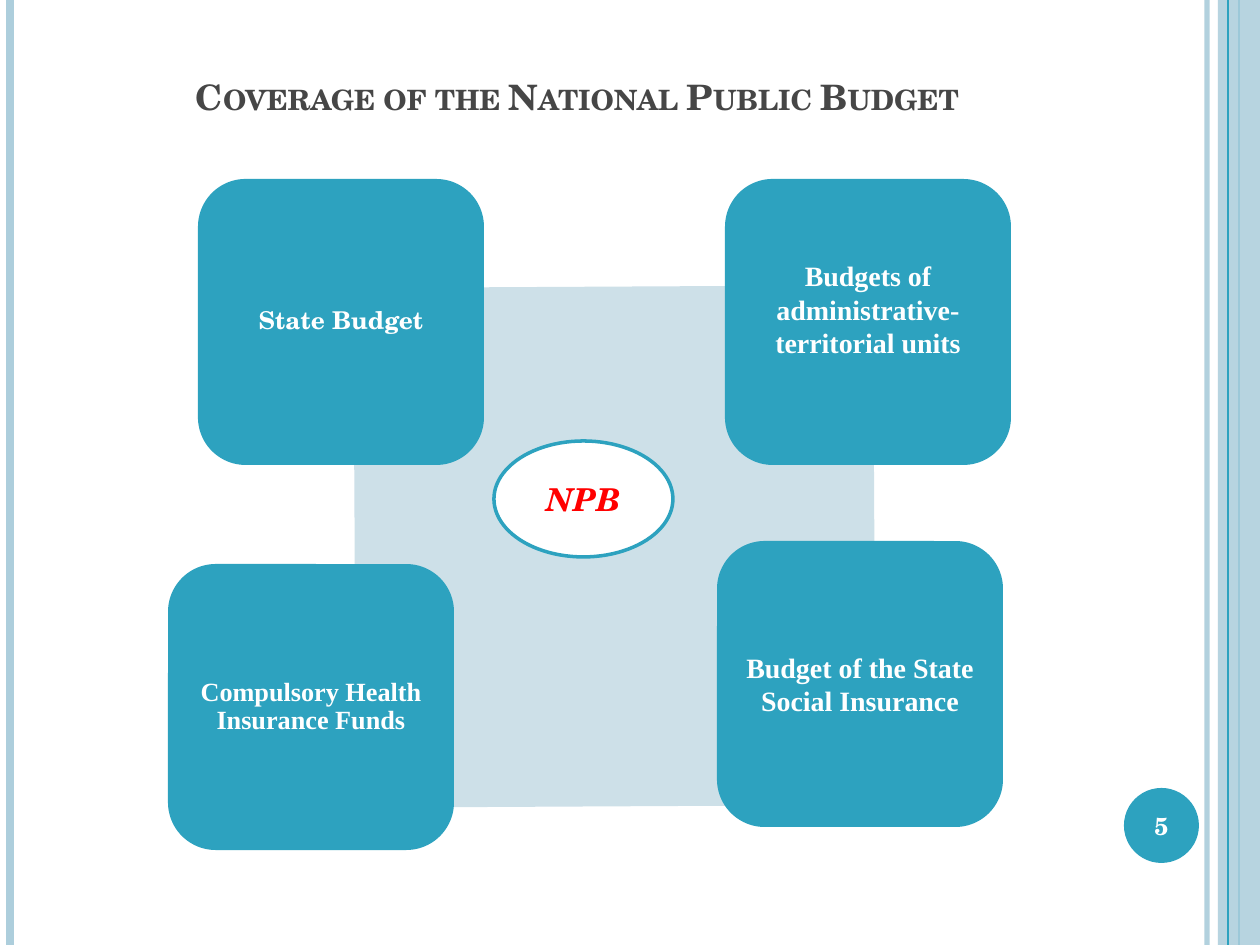
from lxml import etree
from pptx import Presentation
from pptx.dml.color import RGBColor
from pptx.enum.shapes import MSO_CONNECTOR, MSO_SHAPE
from pptx.enum.text import MSO_ANCHOR, PP_ALIGN
from pptx.oxml.ns import qn
from pptx.util import Emu, Pt

TEAL, PALE, WHITE = "2DA2BF", "ADCEDC", "FFFFFF"
SERIF, TIMES = "TeX Gyre Schola", "Times New Roman"
HIGH = 945


def px(n):
    return Emu(round(n * 914400 / 126))


def paint(color, code, alpha=100):
    """Set a color format's RGB and, below 100, its opacity in percent."""
    color.rgb = RGBColor.from_string(code)
    if alpha < 100:
        node = color._xFill.find(qn("a:srgbClr"))
        etree.SubElement(node, qn("a:alpha"), val=str(alpha * 1000))


def add_rule(slide, x, width, code, alpha=100):
    """Draw a line down the full height of the slide."""
    rule = slide.shapes.add_connector(
        MSO_CONNECTOR.STRAIGHT, px(x), px(0), px(x), px(HIGH))
    rule.line.width = Pt(width)
    rule.line.fill.solid()
    paint(rule.line.fill.fore_color, code, alpha)
    etree.SubElement(rule._element.spPr, qn("a:effectLst"))


def add_shape(slide, kind, box, code, alpha=100):
    shape = slide.shapes.add_shape(kind, *map(px, box))
    shape.shadow.inherit = False
    shape.fill.solid()
    paint(shape.fill.fore_color, code, alpha)
    shape.line.fill.background()
    return shape


def write(shape, text, size, face=SERIF, code=WHITE, inset=8, drop=0,
          space=None, anchor=MSO_ANCHOR.MIDDLE):
    """Put one bold centred paragraph in a shape; drop adds bottom inset."""
    frame = shape.text_frame
    frame.word_wrap = True
    frame.vertical_anchor = anchor
    frame.margin_left = frame.margin_right = frame.margin_top = px(inset)
    frame.margin_bottom = px(inset + drop)
    para = frame.paragraphs[0]
    para.text = text
    para.alignment = PP_ALIGN.CENTER
    para.line_spacing = space
    font = para.font
    font.name, font.size, font.bold = face, Pt(size), True
    paint(font.color, code)
    return para


def add_frame(slide):
    """Draw the side rules, the right band and the number badge."""
    add_rule(slide, 1207, 3, PALE, 93)
    add_rule(slide, 10, 4.5, PALE)
    add_rule(slide, 1239, 1.5, TEAL)
    add_shape(slide, MSO_SHAPE.RECTANGLE, (1218, 0, 42, HIGH), PALE, 87)
    add_rule(slide, 1228, 0.75, TEAL)
    badge = add_shape(slide, MSO_SHAPE.OVAL, (1124, 788, 75, 75), TEAL)
    write(badge, "5", 14, inset=0)


def add_title(slide, text):
    title = slide.shapes.title
    title.left, title.top, title.width, title.height = map(
        px, (63, 38, 1029, 88))
    para = write(title, text, 20, code="464646", anchor=MSO_ANCHOR.BOTTOM)
    para.runs[0].font._element.set("cap", "small")


def add_matrix(slide):
    """Draw the four budgets around the national one."""
    back = add_shape(slide, MSO_SHAPE.DIAMOND, (247, 179, 735, 735), "CDE0E8")
    back.rotation = 44.7
    side = 286
    cards = [
        (198, 179, "State Budget", 14, SERIF, 0, 0.9),
        (725, 179, "Budgets of administrative-territorial units", 16, TIMES,
         26, None),
        (168, 564, "Compulsory Health Insurance Funds", 15, TIMES, 0, 0.9),
        (717, 541, "Budget of the State Social Insurance", 16, TIMES, 0, None),
    ]
    for x, y, text, size, face, drop, space in cards:
        card = add_shape(
            slide, MSO_SHAPE.ROUNDED_RECTANGLE, (x, y, side, side), TEAL)
        write(card, text, size, face, drop=drop, space=space)

    core = add_shape(slide, MSO_SHAPE.OVAL, (494, 441, 179, 116), WHITE)
    core.line.width = Pt(2)
    paint(core.line.color, TEAL)
    write(core, "NPB", 18, code="FF0000").font.italic = True


def main():
    deck = Presentation()
    deck.slide_width, deck.slide_height = px(1260), px(HIGH)
    slide = deck.slides.add_slide(deck.slide_layouts[5])
    add_frame(slide)
    add_title(slide, "Coverage of the National Public Budget")
    add_matrix(slide)
    deck.save("out.pptx")


if __name__ == "__main__":
    main()
